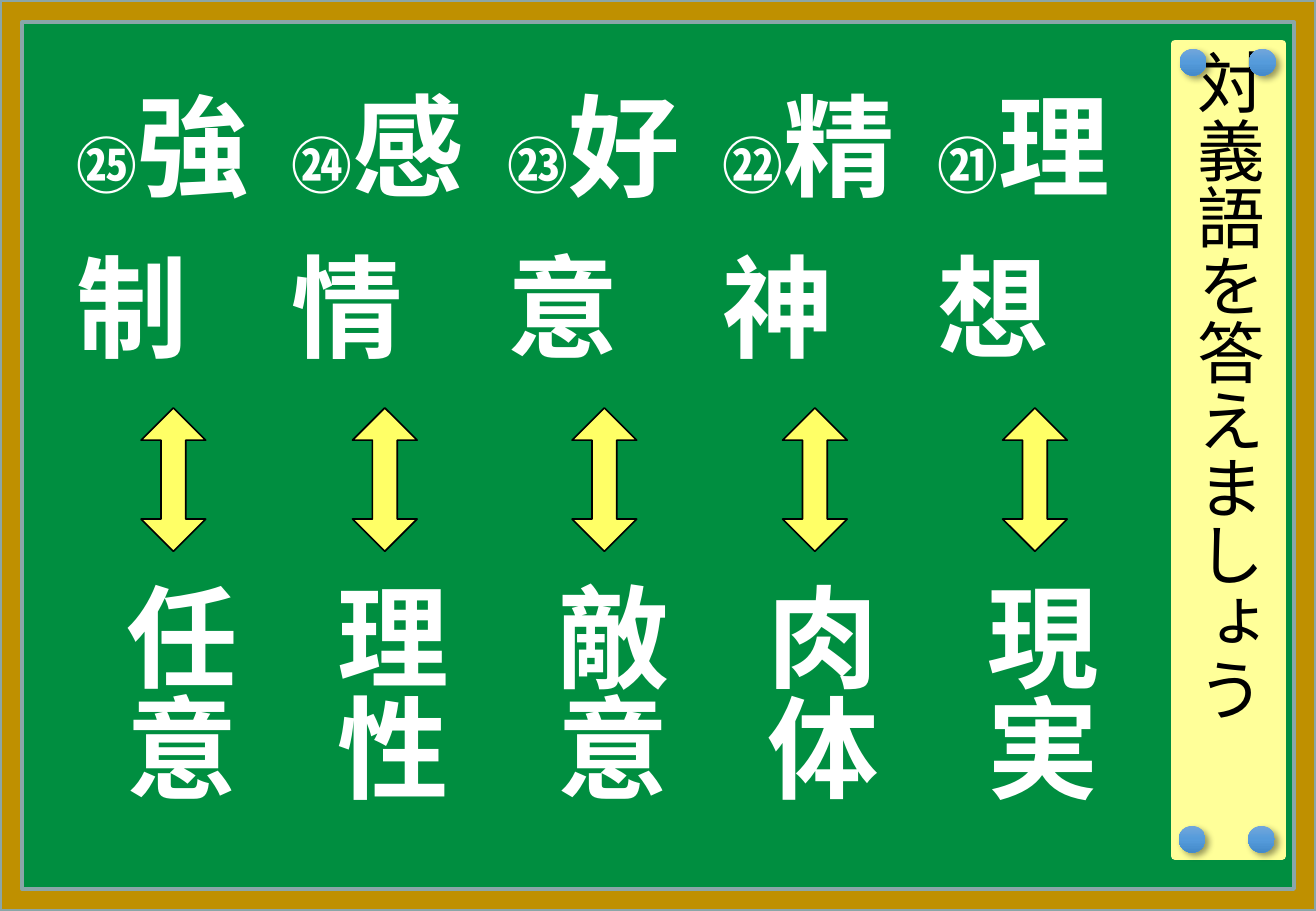
"""Build a blackboard slide quizzing five pairs of Japanese antonyms."""
import copy
import pptx
import pptx.dml.color
import pptx.enum.shapes
import pptx.enum.text
import pptx.oxml
import pptx.oxml.ns
import pptx.util
from pptx.util import Cm

TITLE = "対義語を答えましょう"
PAIRS = [
    ("㉕", "強制", "任意", 2.95),
    ("㉔", "感情", "理性", 7.37),
    ("㉓", "好意", "敵意", 11.96),
    ("㉒", "精神", "肉体", 16.36),
    ("㉑", "理想", "現実", 20.96),
]
ROWS = [7.39, 3.61, 6.15]
PINS = [(26.11, 1.02), (24.66, 1.02), (26.09, 17.27), (24.64, 17.27)]
STOPS = [(0, "71A6DB"), (0.5, "559BDB"), (1, "448ACA")]
FONT = "Noto Sans CJK JP"
WHITE, BLACK = "FFFFFF", "000000"
PITCH = 4.5
SHADE = (
    '<a:outerShdw %s blurRad="50800" dist="38100" dir="2700000" algn="tl">'
    '<a:srgbClr val="000000"><a:alpha val="40000"/></a:srgbClr></a:outerShdw>'
    % pptx.oxml.ns.nsdecls("a")
)
NONE = "{2D5ABB26-0587-4C30-8999-92F81FD0307C}"
KIND = pptx.enum.shapes.MSO_SHAPE
FIT = pptx.enum.text.MSO_AUTO_SIZE
MIDDLE = pptx.enum.text.MSO_ANCHOR.MIDDLE
qn = pptx.oxml.ns.qn


def rgb(code):
    return pptx.dml.color.RGBColor.from_string(code)


def box(*sizes):
    return [Cm(size) for size in sizes]


def write(frame, parts, color, bold):
    line = frame.paragraphs[0]
    for text, size in parts:
        run = line.add_run()
        run.text = text
        font = run.font
        font.size, font.bold, font.name = pptx.util.Pt(size), bold, FONT
        font.color.rgb = rgb(color)
        east = run._r.get_or_add_rPr().makeelement(qn("a:ea"), {"typeface": FONT})
        run._r.rPr.find(qn("a:latin")).addnext(east)


def upright(frame):
    frame._txBody.bodyPr.set("vert", "eaVert")


def paint(shape, fill, line, width):
    shape.fill.solid()
    shape.fill.fore_color.rgb = rgb(fill)
    shape.line.color.rgb = rgb(line)
    shape.line.width = pptx.util.Pt(width)


def draw(slide, kind, place):
    shape = slide.shapes.add_shape(kind, *box(*place))
    shape.shadow.inherit = False
    return shape


def add_board(slide):
    slide.background.fill.solid()
    slide.background.fill.fore_color.rgb = rgb("008E40")
    frame = draw(slide, KIND.FRAME, (0, 0, 27.51, 19.05))
    frame.adjustments[0] = 0.024
    paint(frame, "BF9000", "8AA6A8", 2)


def add_title(slide):
    title = slide.shapes.title
    title.left, title.top, title.width, title.height = box(24.56, 0.91, 2.24, 16.99)
    paint(title, "FFFF99", "FFFF99", 4.5)
    frame = title.text_frame
    frame.auto_size = FIT.NONE
    frame.vertical_anchor = MIDDLE
    upright(frame)
    write(frame, [(TITLE, 40)], BLACK, False)
    frame.paragraphs[0].alignment = pptx.enum.text.PP_ALIGN.LEFT


def add_words(slide):
    count = len(PAIRS)
    place = box(1.35, 0.91, PITCH * count, sum(ROWS))
    table = slide.shapes.add_table(len(ROWS), count, *place).table
    table.first_row = table.horz_banding = False
    table._tbl.tblPr.find(qn("a:tableStyleId")).text = NONE
    for row, height in zip(table.rows, ROWS):
        row.height = Cm(height)
    for cell in table.iter_cells():
        cell.fill.background()
    for col, (mark, word, _, _) in enumerate(PAIRS):
        cell = table.cell(0, col)
        cell.vertical_anchor = MIDDLE
        cell._tc.get_or_add_tcPr().set("vert", "eaVert")
        write(cell.text_frame, [(mark, 36), (word, 66)], WHITE, True)


def add_pair(slide, answer, left):
    arrow = draw(slide, KIND.UP_DOWN_ARROW, (left, 8.53, 1.35, 3))
    arrow.adjustments[0], arrow.adjustments[1] = 0.326, 0.384
    paint(arrow, "FFFF66", BLACK, 1)
    text = slide.shapes.add_textbox(*box(left - 1.04, 11.91, 3.33, 4.88))
    frame = text.text_frame
    frame.word_wrap = False
    frame.auto_size = FIT.SHAPE_TO_FIT_TEXT
    upright(frame)
    write(frame, [(answer, 66)], WHITE, True)


def add_pin(slide, left, top):
    pin = draw(slide, KIND.OVAL, (left, top, 0.56, 0.56))
    pin.line.fill.background()
    pin.fill.gradient()
    pin.fill.gradient_angle = 270
    props = pin._element.spPr
    stops = props.find(".//" + qn("a:gsLst"))
    stops.insert(1, copy.deepcopy(stops[0]))
    for stop, (place, color) in zip(pin.fill.gradient_stops, STOPS):
        stop.position = place
        stop.color.rgb = rgb(color)
    props.find(qn("a:effectLst")).append(pptx.oxml.parse_xml(SHADE))


def main():
    deck = pptx.Presentation()
    deck.slide_width, deck.slide_height = box(27.51, 19.05)
    slide = deck.slides.add_slide(deck.slide_layouts[5])
    add_board(slide)
    add_title(slide)
    add_words(slide)
    for _, _, answer, left in PAIRS:
        add_pair(slide, answer, left)
    for left, top in PINS:
        add_pin(slide, left, top)
    deck.save("out.pptx")


if __name__ == "__main__":
    main()
